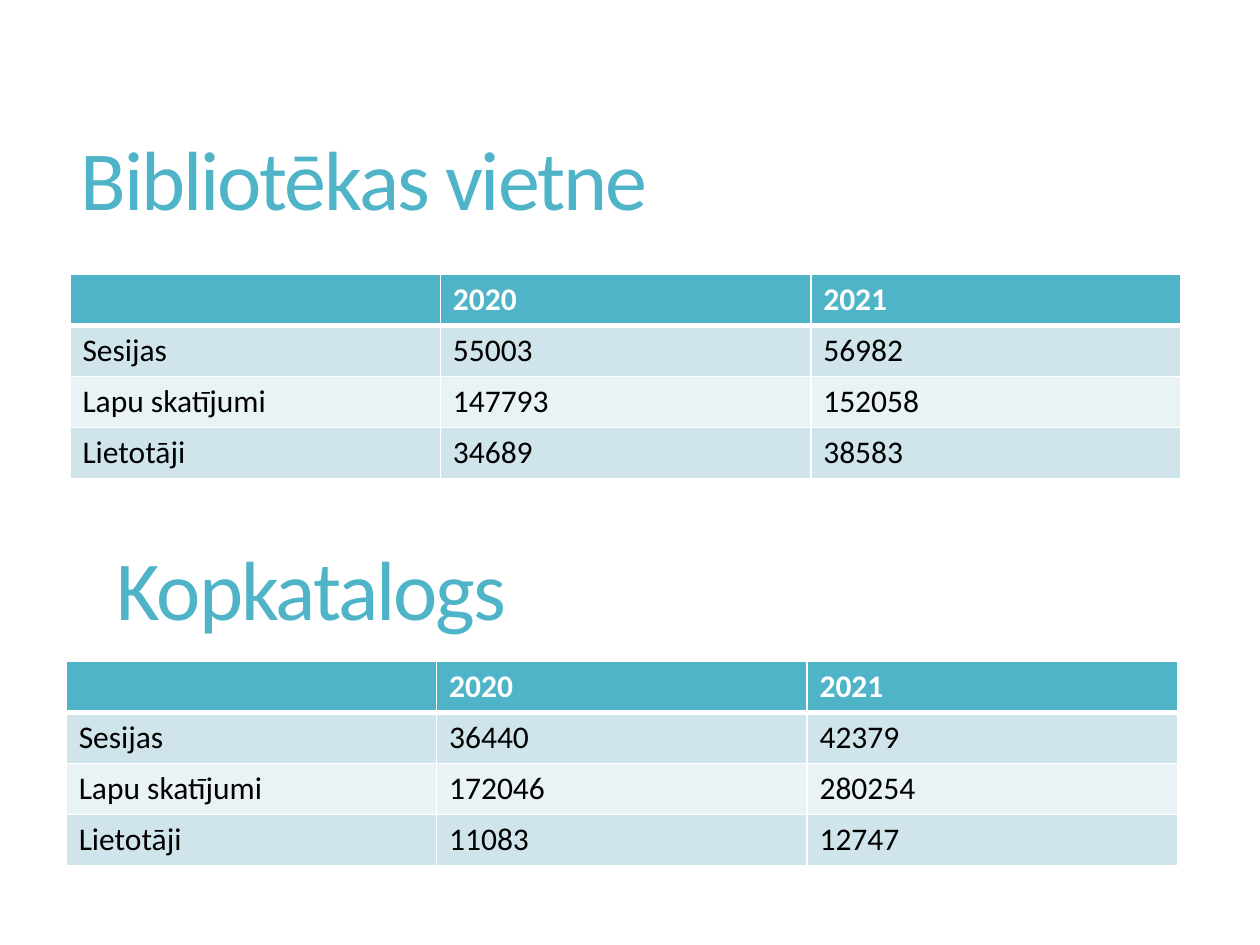
from dataclasses import dataclass

from lxml.etree import SubElement
from pptx import Presentation
from pptx.dml.color import RGBColor as RGB
from pptx.enum.text import MSO_ANCHOR as Anchor
from pptx.oxml.ns import qn
from pptx.util import Inches, Pt


@dataclass(frozen=True)
class Theme:
    font: str = "Calibri"
    accent: str = "50B4C8"
    band_dark: str = "D0E5EB"
    band_light: str = "E9F2F5"
    white: str = "FFFFFF"
    text: str = "000000"
    title_size: int = 48
    table_size: int = 18
    title_spacing: int = -120  # hundredths of a point
    thin: int = 1
    thick: int = 3


def write(tf, text, *, size, color, bold=False, spacing=None, font="Calibri"):
    """Put one formatted run in the first paragraph and return the paragraph."""
    p = tf.paragraphs[0]
    r = p.add_run()
    r.text = text
    r.font.name, r.font.size, r.font.bold = font, Pt(size), bold
    r.font.color.rgb = RGB.from_string(color)
    if spacing is not None:
        r.font._element.set("spc", str(spacing))
    return p


class SlideBuilder:
    """Places elements on a grid of 100 columns by 75 rows."""

    COLS, ROWS = 100, 75

    def __init__(self, prs, theme):
        self.prs, self.theme = prs, theme
        self.s = prs.slides.add_slide(prs.slide_layouts[6])

    def box(self, col, row, cols, rows):
        x = self.prs.slide_width / self.COLS
        y = self.prs.slide_height / self.ROWS
        return int(col * x), int(row * y), int(cols * x), int(rows * y)

    def title(self, text, col, row, cols=88.4, rows=18.1):
        t = self.theme
        tf = self.s.shapes.add_textbox(*self.box(col, row, cols, rows)).text_frame
        tf.word_wrap = True
        tf.vertical_anchor = Anchor.MIDDLE
        p = write(tf, text, size=t.title_size, color=t.accent,
                  spacing=t.title_spacing, font=t.font)
        p.line_spacing = 0.9

    def table(self, data, col, row, cols=88.2, row_height=4.05):
        t = self.theme
        place = self.box(col, row, cols, row_height * len(data))
        table = self.s.shapes.add_table(len(data), len(data[0]), *place).table
        for i, values in enumerate(data):
            header = i == 0
            fill = t.accent if header else (t.band_dark if i % 2 else t.band_light)
            for j, value in enumerate(values):
                cell = table.cell(i, j)
                self.borders(cell, L=t.thin, R=t.thin,
                             T=t.thick if i == 1 else t.thin,
                             B=t.thick if header else t.thin)
                cell.fill.solid()
                cell.fill.fore_color.rgb = RGB.from_string(fill)
                write(cell.text_frame, value, size=t.table_size, bold=header,
                      color=t.white if header else t.text, font=t.font)

    def borders(self, cell, **widths):
        tc_pr = cell._tc.get_or_add_tcPr()
        for side, width in widths.items():
            ln = SubElement(tc_pr, qn(f"a:ln{side}"), w=str(Pt(width)))
            solid = SubElement(ln, qn("a:solidFill"))
            SubElement(solid, qn("a:srgbClr"), val=self.theme.white)


def main():
    prs = Presentation()
    prs.slide_width, prs.slide_height = Inches(10), Inches(7.5)
    slide = SlideBuilder(prs, Theme())
    header = ("", "2020", "2021")

    slide.title("Bibliotēkas vietne", 5.4, 5.5)
    slide.table([
        header,
        ("Sesijas", "55003", "56982"),
        ("Lapu skatījumi", "147793", "152058"),
        ("Lietotāji", "34689", "38583"),
    ], 5.55, 21.8)

    slide.title("Kopkatalogs", 8.3, 38)
    slide.table([
        header,
        ("Sesijas", "36440", "42379"),
        ("Lapu skatījumi", "172046", "280254"),
        ("Lietotāji", "11083", "12747"),
    ], 5.25, 52.5)

    prs.save("out.pptx")


if __name__ == "__main__":
    main()
